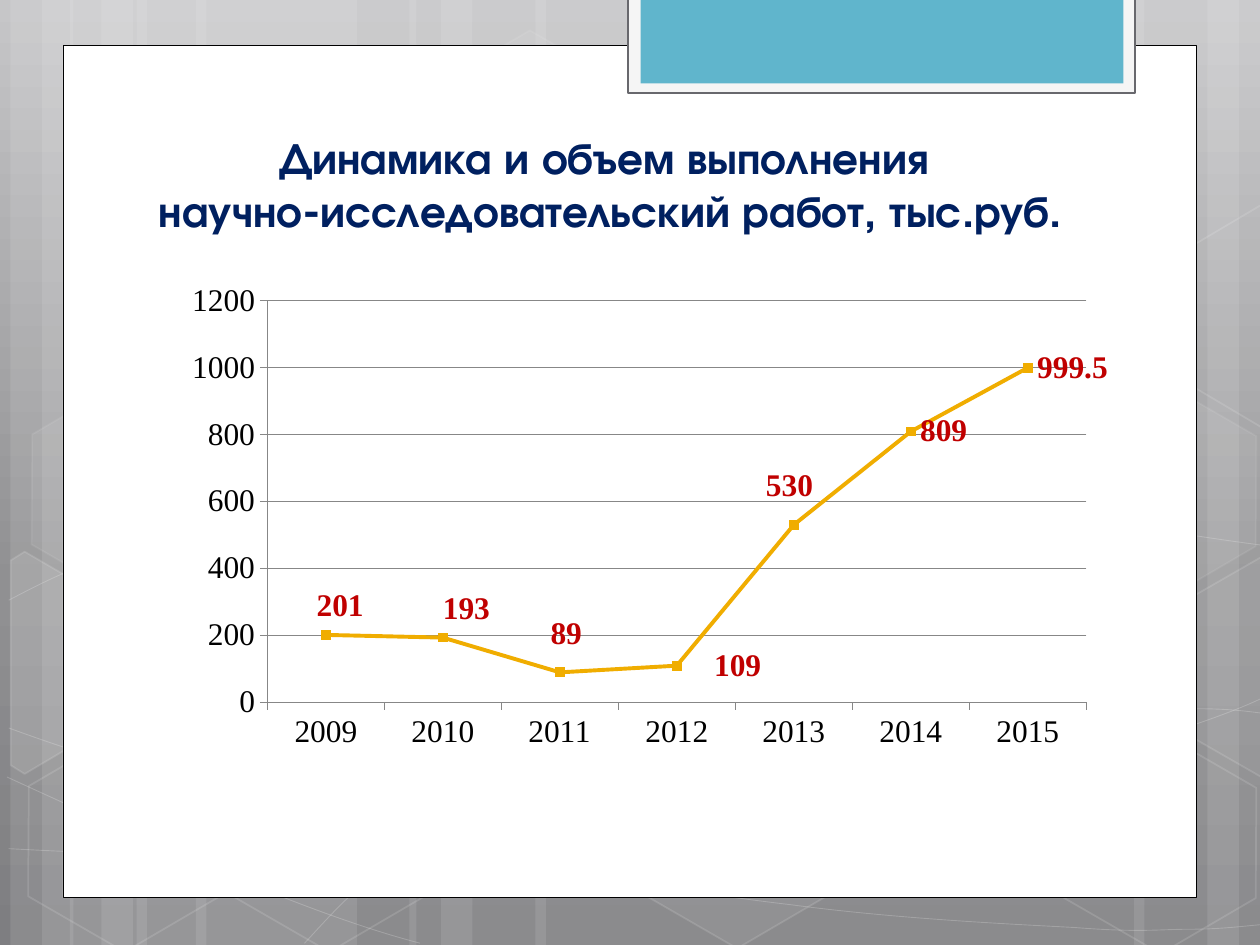
import dataclasses
import math

import lxml.etree
import pptx
import pptx.chart.data
import pptx.dml.color
import pptx.enum.chart
import pptx.enum.shapes
import pptx.enum.text
import pptx.oxml.ns
import pptx.util

Pt = pptx.util.Pt
qn = pptx.oxml.ns.qn
SHAPE = pptx.enum.shapes.MSO_SHAPE
C15 = "http://schemas.microsoft.com/office/drawing/2012/chart"


@dataclasses.dataclass(frozen=True)
class Theme:
    white: str = "FFFFFF"
    black: str = "000000"
    backdrop: tuple = ((0, "C6C6C8"), (0.62, "909092"), (1, "7E7E81"))
    tab_frame: str = "F5F5F5"
    tab_line: str = "68686D"
    tab: str = "60B5CC"
    title: str = "002060"
    series: str = "F0AD00"
    label: str = "C00000"
    grid: str = "878787"
    title_font: str = "TeX Gyre Adventor"
    chart_font: str = "Times New Roman"
    title_size: float = 25.2
    chart_size: float = 18


def rgb(color):
    return pptx.dml.color.RGBColor.from_string(color)


def style_font(font, *, name, size, color, bold=False):
    font.name, font.size, font.bold = name, Pt(size), bold
    font.color.rgb = rgb(color)


def write_text(tf, text, *, align, anchor, **font):
    tf.word_wrap = True
    tf.auto_size = pptx.enum.text.MSO_AUTO_SIZE.NONE
    tf.vertical_anchor = anchor
    p = tf.paragraphs[0]
    p.alignment = align
    for i, line in enumerate(text.split("\n")):
        if i:
            p.add_line_break()
        r = p.add_run()
        r.text = line
        style_font(r.font, **font)


def set_alpha(parent, percent):
    clr = parent.find(qn("a:solidFill"))[0]
    lxml.etree.SubElement(clr, qn("a:alpha")).set("val", str(percent * 1000))


def manual_layout(**values):
    layout = lxml.etree.Element(qn("c:layout"))
    manual = lxml.etree.SubElement(layout, qn("c:manualLayout"))
    for tag, val in values.items():
        lxml.etree.SubElement(manual, qn("c:" + tag)).set("val", str(val))
    return layout


def hide_leader_lines(dlbls):
    for node in dlbls.findall(qn("c:showLeaderLines")):
        node.set("val", "0")
    ext_list = lxml.etree.SubElement(dlbls, qn("c:extLst"))
    ext = lxml.etree.SubElement(ext_list, qn("c:ext"), nsmap={"c15": C15},
                                uri="{CE6537A1-D6FC-4f65-9D91-7224C49458BB}")
    lxml.etree.SubElement(ext, "{%s}showLeaderLines" % C15, val="0")


def turn(point, center, degrees):
    angle = math.radians(degrees)
    dx, dy = point[0] - center[0], point[1] - center[1]
    return (center[0] + dx * math.cos(angle) - dy * math.sin(angle),
            center[1] + dx * math.sin(angle) + dy * math.cos(angle))


class SlideBuilder:
    def __init__(self, prs, theme):
        self.theme = theme
        self.s = prs.slides.add_slide(prs.slide_layouts[5])

    def background(self):
        fill = self.s.background.fill
        fill.gradient()
        fill.gradient_angle = 270
        stops = next(self.s.element.iter(qn("a:gsLst")))
        stops.clear()
        for pos, color in self.theme.backdrop:
            gs = lxml.etree.SubElement(stops, qn("a:gs"), pos=str(int(pos * 100000)))
            lxml.etree.SubElement(gs, qn("a:srgbClr"), val=color)

    def paint(self, sp, fill=None, alpha=100, line=None, width=1, line_alpha=100):
        sp.shadow.inherit = False
        if fill and alpha:
            sp.fill.solid()
            sp.fill.fore_color.rgb = rgb(fill)
            set_alpha(sp.element.spPr, alpha)
        else:
            sp.fill.background()
        if line:
            sp.line.color.rgb = rgb(line)
            sp.line.width = Pt(width)
            set_alpha(sp.element.spPr.find(qn("a:ln")), line_alpha)
        else:
            sp.line.fill.background()
        return sp

    def shape(self, kind, x, y, w, h, **paint):
        sp = self.s.shapes.add_shape(kind, Pt(x), Pt(y), Pt(w), Pt(h))
        return self.paint(sp, **paint)

    def outline(self, points, close, **paint):
        pts = [(Pt(x), Pt(y)) for x, y in points]
        builder = self.s.shapes.build_freeform(*pts[0])
        builder.add_line_segments(pts[1:], close=close)
        return self.paint(builder.convert_to_shape(), **paint)

    def curve(self, points):
        """Draw a start point followed by triples of cubic Bezier points."""
        sp = self.outline(points, False, line=self.theme.white, width=0.5, line_alpha=20)
        track = next(sp.element.iter(qn("a:path")))
        lines = track.findall(qn("a:lnTo"))
        for i in range(0, len(lines), 3):
            bezier = lxml.etree.SubElement(track, qn("a:cubicBezTo"))
            for line in lines[i:i + 3]:
                bezier.append(line[0])
                track.remove(line)

    def hexagon(self, x, y, alpha, line_alpha):
        sp = self.shape(SHAPE.HEXAGON, x, y, 126, 109.4, fill=self.theme.white,
                        alpha=alpha, line=self.theme.white, line_alpha=line_alpha)
        sp.adjustments[0], sp.adjustments[1] = 0.285, 1.155
        sp.rotation = 30

    def cut_hexagon(self, center, alpha, points):
        flat = [turn(point, center, -30) for point in points]
        sp = self.outline(flat, True, fill=self.theme.white, alpha=alpha,
                          line=self.theme.white, line_alpha=12)
        sp.rotation = 30

    def title(self, text, x, y, w, h):
        sp = self.s.shapes.title
        sp.left, sp.top, sp.width, sp.height = Pt(x), Pt(y), Pt(w), Pt(h)
        write_text(sp.text_frame, text, align=pptx.enum.text.PP_ALIGN.CENTER,
                   anchor=pptx.enum.text.MSO_ANCHOR.BOTTOM, name=self.theme.title_font,
                   size=self.theme.title_size, color=self.theme.title, bold=True)
        self.s.shapes.element.append(sp.element)  # in front of the panel

    def line_chart(self, cats, vals, offsets, x, y, w, h):
        th, enum = self.theme, pptx.enum.chart
        data = pptx.chart.data.CategoryChartData()
        data.categories = cats
        data.add_series("Series 1", vals)
        chart = self.s.shapes.add_chart(enum.XL_CHART_TYPE.LINE_MARKERS_STACKED,
                                        Pt(x), Pt(y), Pt(w), Pt(h), data).chart
        chart.has_legend = chart.has_title = False
        style_font(chart.font, name=th.chart_font, size=th.chart_size, color=th.black)

        # Axes and grid
        val_axis = chart.value_axis
        val_axis.minimum_scale, val_axis.maximum_scale, val_axis.major_unit = 0, 1200, 200
        val_axis.has_major_gridlines = True
        for axis in (val_axis, chart.category_axis):
            axis.major_tick_mark = enum.XL_TICK_MARK.OUTSIDE
            axis.minor_tick_mark = enum.XL_TICK_MARK.NONE
        for part in (val_axis, chart.category_axis, val_axis.major_gridlines):
            part.format.line.color.rgb = rgb(th.grid)
            part.format.line.width = Pt(0.75)

        # Series line and markers
        plot = chart.plots[0]
        plot.vary_by_categories = False
        series = plot.series[0]
        series.smooth = False
        series.format.line.color.rgb = rgb(th.series)
        series.format.line.width = Pt(2.25)
        series.marker.style, series.marker.size = enum.XL_MARKER_STYLE.SQUARE, 5
        series.marker.format.fill.solid()
        series.marker.format.fill.fore_color.rgb = rgb(th.series)
        series.marker.format.line.color.rgb = rgb(th.series)

        # Labels: on the right, the first ones shifted by a share of the chart
        labels = series.data_labels
        labels.show_value = True
        for label in [labels] + [series.points[i].data_label for i in range(len(offsets))]:
            style_font(label.font, name=th.chart_font, size=th.chart_size,
                       color=th.label, bold=True)
            label.position = enum.XL_LABEL_POSITION.RIGHT
        for node, (dx, dy) in zip(chart.element.iter(qn("c:dLbl")), offsets):
            node.find(qn("c:idx")).addnext(manual_layout(x=dx, y=dy))
        hide_leader_lines(next(chart.element.iter(qn("c:dLbls"))))

        # Plot area
        area = next(chart.element.iter(qn("c:plotArea")))
        for old in area.findall(qn("c:layout")):
            area.remove(old)
        area.insert(0, manual_layout(layoutTarget="inner", xMode="edge", yMode="edge",
                                     x=0.1, y=0.05, w=0.88, h=0.83))


STRIPES = [(78, 126), (6, 36), (24, 60), (112, 126), (40, 36), (58, 60), (528, 126),
           (690, 36), (648, 60), (306, 222), (234, 36), (252, 60)]
CURVES = [
    [(5, 485), (44, 487), (83, 489), (137, 488), (191, 487), (258, 486), (330, 479),
     (402, 472), (504, 458), (570, 444), (636, 431), (703, 409), (725, 397)],
    [(5, 343), (26, 332), (47, 321), (87, 310), (128, 300), (186, 284), (250, 279),
     (314, 274), (392, 273), (471, 279), (550, 284), (682, 307), (725, 312)],
    [(4, 444), (91, 484), (178, 523), (240, 539)],
    [(5, 416), (27, 424), (50, 432), (92, 444), (134, 454), (197, 472), (257, 485),
     (317, 497), (392, 510), (452, 517), (512, 525), (576, 528), (614, 530),
     (652, 533), (662, 531), (680, 531), (699, 531), (712, 529), (725, 528)],
    [(174, 539), (187, 525), (200, 510), (217, 498), (235, 485), (259, 470), (279, 460),
     (300, 450), (312, 446), (338, 438), (364, 431), (413, 421), (438, 416),
     (464, 411), (467, 411), (490, 410), (512, 408), (547, 405), (572, 405),
     (610, 405), (648, 405), (686, 405), (699, 405), (711, 406), (724, 408)],
]
HEXAGONS = [(240, 26, 4, 8), (358, 424, 6, 12), (8, 426, 0, 12), (10, 225, 7, 8),
            (125, 426, 0, 12), (542, 326, 10, 12), (600, 427, 0, 12), (600, 226, 7, 8)]
CUT_HEXAGONS = [
    ((26, 385), 10, [(6, 320), (14, 315), (69, 347), (68, 410), (14, 442), (6, 437)]),
    ((709, 374), 4, [(667, 349), (721, 318), (726, 321), (726, 441), (721, 444), (667, 413)]),
    ((709, 174), 0, [(667, 149), (721, 117), (727, 121), (726, 241), (721, 244), (667, 212)]),
]


def main():
    prs = pptx.Presentation()
    prs.slide_width, prs.slide_height = Pt(720), Pt(540)
    th = Theme()
    b = SlideBuilder(prs, th)

    # Backdrop
    b.background()
    for x, w in STRIPES:
        b.shape(SHAPE.RECTANGLE, x, 0, w, 540, fill=th.white, alpha=10)
    for points in CURVES:
        b.curve(points)
    for hexagon in HEXAGONS:
        b.hexagon(*hexagon)
    for cut in CUT_HEXAGONS:
        b.cut_hexagon(*cut)

    # Panel and tab
    b.shape(SHAPE.RECTANGLE, 36, 26, 648, 487, fill=th.white, line=th.black, width=0.5)
    b.shape(SHAPE.RECTANGLE, 359, -1.4, 289.6, 54.7, fill=th.tab_frame,
            line=th.tab_line, width=1.25)
    b.shape(SHAPE.RECTANGLE, 366, -1.4, 276, 49, fill=th.tab)

    # Content
    b.title("Динамика и объем выполнения \nнаучно-исследовательский работ, тыс.руб.",
            54, 66.2, 589.7, 72.7)
    b.line_chart([str(year) for year in range(2009, 2016)],
                 [201, 193, 89, 109, 530, 809, 999.5],
                 [(-0.02, -0.06), (-0.01, -0.06), (-0.02, -0.08), (0.03, 0), (-0.04, -0.08)],
                 99.6, 158, 533.5, 276.5)
    prs.save("out.pptx")


if __name__ == "__main__":
    main()
